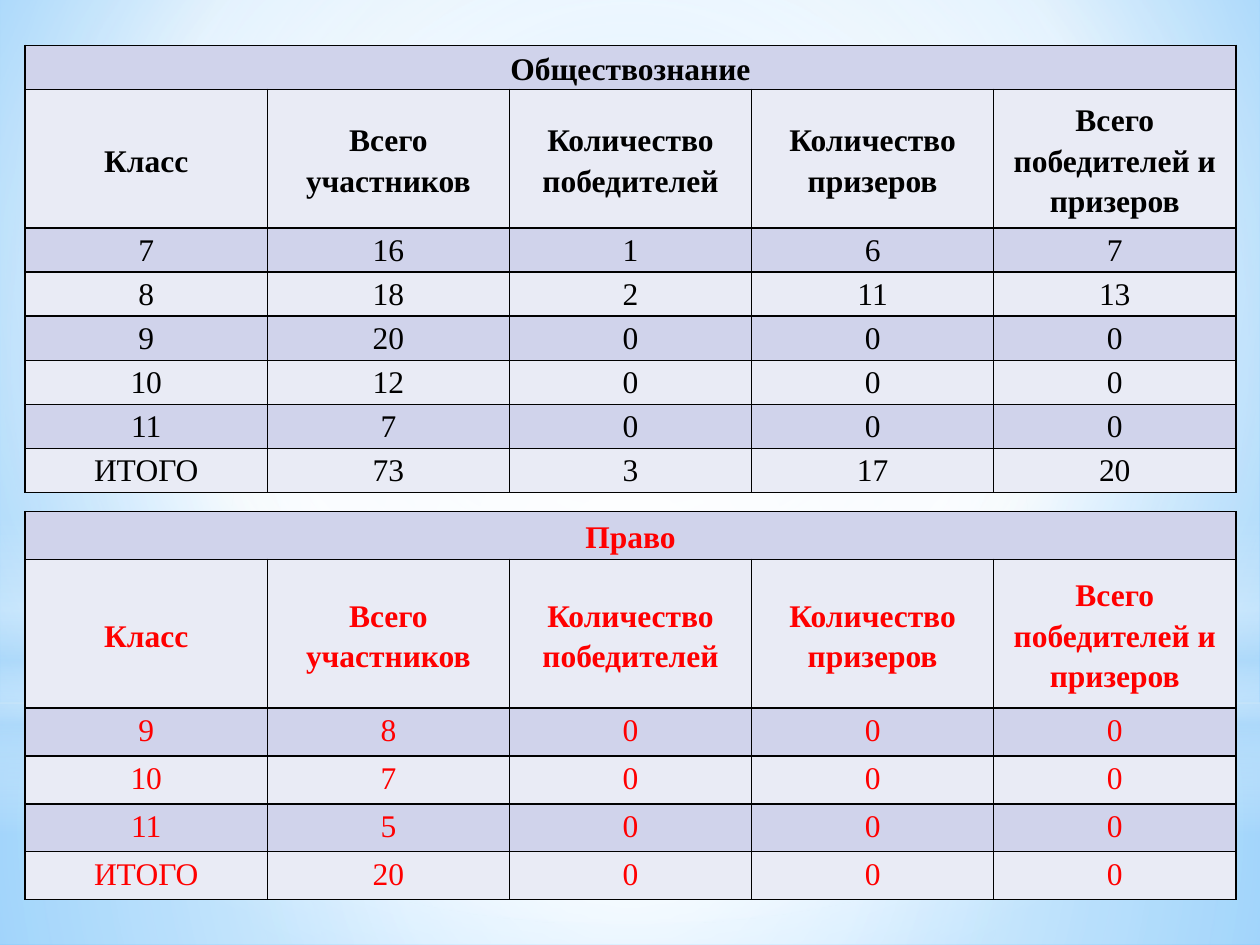
from lxml.etree import SubElement
from pptx import Presentation
from pptx.dml.color import RGBColor
from pptx.enum.shapes import MSO_SHAPE
from pptx.enum.text import MSO_ANCHOR, PP_ALIGN
from pptx.oxml.ns import qn
from pptx.util import Inches, Pt

CENTER = (50, 50, 50, 50)
BANDS = ("D0D3EB", "E9EBF5")
HEADERS = ["Класс", "Всего участников", "Количество победителей",
           "Количество призеров", "Всего победителей и призеров"]
SOCIAL_ROWS = [
    ["7", "16", "1", "6", "7"],
    ["8", "18", "2", "11", "13"],
    ["9", "20", "0", "0", "0"],
    ["10", "12", "0", "0", "0"],
    ["11", "7", "0", "0", "0"],
    ["ИТОГО", "73", "3", "17", "20"],
]
LAW_ROWS = [
    ["9", "8", "0", "0", "0"],
    ["10", "7", "0", "0", "0"],
    ["11", "5", "0", "0", "0"],
    ["ИТОГО", "20", "0", "0", "0"],
]
GLOWS = [
    (MSO_SHAPE.RECTANGLE, (0, 5.58, 10, 1.92),
     [(0, "FFFFFF", 91), (37, "FFFFFF", 76), (100, "B4DCFA", 79)], CENTER),
    (MSO_SHAPE.RECTANGLE, (0, 0, 10, 5.58),
     [(0, "FFFFFF", 89), (48, "FFFFFF", 62), (100, "B4DCFA", 79)], CENTER),
    (MSO_SHAPE.RECTANGLE, (0, 4.12, 10, 2.5),
     [(0, "FFFFFF", 0), (29, "FFFFFF", 30), (45, "B4DCFA", 40),
      (55, "FFFFFF", 26), (65, "B4DCFA", 60), (100, "FFFFFF", 0)], None),
    (MSO_SHAPE.OVAL, (0, 1.75, 10, 5.58),
     [(0, "FFFFFF", 100), (56, "FFFFFF", 0)], CENTER),
]


def rgb(value):
    """Turn a hex string into a colour."""
    return RGBColor.from_string(value)


def set_format(obj, values):
    """Set each attribute of an object from a dict."""
    for name, value in values.items():
        setattr(obj, name, value)


def set_gradient(fill, element, stops, center=None):
    """Give a fill gradient stops, circular round center or running downwards."""
    fill.gradient()
    grad = next(element.iter(qn("a:gradFill")))
    grad.clear()
    grad.set("rotWithShape", "1")
    stop_list = SubElement(grad, qn("a:gsLst"))
    for pos, color, alpha in stops:
        stop = SubElement(stop_list, qn("a:gs"), pos=str(pos * 1000))
        clr = SubElement(stop, qn("a:srgbClr"), val=color)
        if alpha < 100:
            SubElement(clr, qn("a:alpha"), val=str(alpha * 1000))
    if center:
        circle = SubElement(grad, qn("a:path"), path="circle")
        sides = {side: str(v * 1000) for side, v in zip("ltrb", center)}
        SubElement(circle, qn("a:fillToRect"), **sides)
    else:
        SubElement(grad, qn("a:lin"), ang="5400000", scaled="0")


def add_backdrop(slide):
    """Paint the sky background and its soft glows."""
    stops = [(0, "9ED5FF", 100), (60, "FFFFFF", 100), (100, "5BB9FF", 100)]
    set_gradient(slide.background.fill, slide.element, stops, (20, 10, 20, 60))
    for kind, box, stops, center in GLOWS:
        sp = slide.shapes.add_shape(kind, *map(Inches, box))
        sp.shadow.inherit = False
        sp.line.fill.background()
        set_gradient(sp.fill, sp.element, stops, center)


def set_borders(cell):
    """Draw a thin black line on every side of a cell."""
    tc_pr = cell._tc.get_or_add_tcPr()
    for i, side in enumerate(("lnL", "lnR", "lnT", "lnB")):
        ln = SubElement(tc_pr, qn(f"a:{side}"), w=str(Pt(1)))
        fill = SubElement(ln, qn("a:solidFill"))
        SubElement(fill, qn("a:srgbClr"), val="000000")
        tc_pr.insert(i, ln)


def fill_cell(cell, text, fill, color, heading):
    """Write and format one table cell."""
    inset = Inches(0.07 if heading else 0.08)
    set_format(cell, {
        "margin_left": inset, "margin_right": inset,
        "margin_top": 0, "margin_bottom": 0,
        "vertical_anchor": MSO_ANCHOR.MIDDLE if heading else MSO_ANCHOR.TOP,
    })
    cell.fill.solid()
    cell.fill.fore_color.rgb = rgb(fill)
    set_borders(cell)
    p = cell.text_frame.paragraphs[0]
    set_format(p, {"alignment": PP_ALIGN.CENTER, "line_spacing": 1.15,
                   "space_after": Pt(10 if heading else 0)})
    if text:
        r = p.add_run()
        r.text = text
        set_format(r.font, {"name": "Times New Roman", "size": Pt(18), "bold": heading})
        r.font.color.rgb = rgb(color)


def add_results(slide, box, subject, results, color, row_height, header_height):
    """Place the results table of one subject in a box."""
    rows = [[subject] + [""] * (len(HEADERS) - 1), HEADERS] + results
    frame = slide.shapes.add_table(len(rows), len(HEADERS), *map(Inches, box))
    table = frame.table
    set_format(table, {"first_row": False, "horz_banding": False})
    for column in table.columns:
        column.width = Inches(box[2] / len(HEADERS))
    for i, values in enumerate(rows):
        table.rows[i].height = Inches(header_height if i == 1 else row_height)
        for j, text in enumerate(values):
            fill_cell(table.cell(i, j), text, BANDS[i % 2], color, i < 2)
    table.cell(0, 0).merge(table.cell(0, len(HEADERS) - 1))


def main():
    """Build the slide and save it."""
    prs = Presentation()
    set_format(prs, {"slide_width": Inches(10), "slide_height": Inches(7.5)})
    slide = prs.slides.add_slide(prs.slide_layouts[6])
    add_backdrop(slide)
    add_results(slide, (0.2, 0.36, 9.61, 3.54), "Обществознание", SOCIAL_ROWS,
                "000000", 0.35, 1.1)
    add_results(slide, (0.2, 4.06, 9.61, 3.07), "Право", LAW_ROWS,
                "FF0000", 0.38, 1.18)
    prs.save("out.pptx")


if __name__ == "__main__":
    main()
